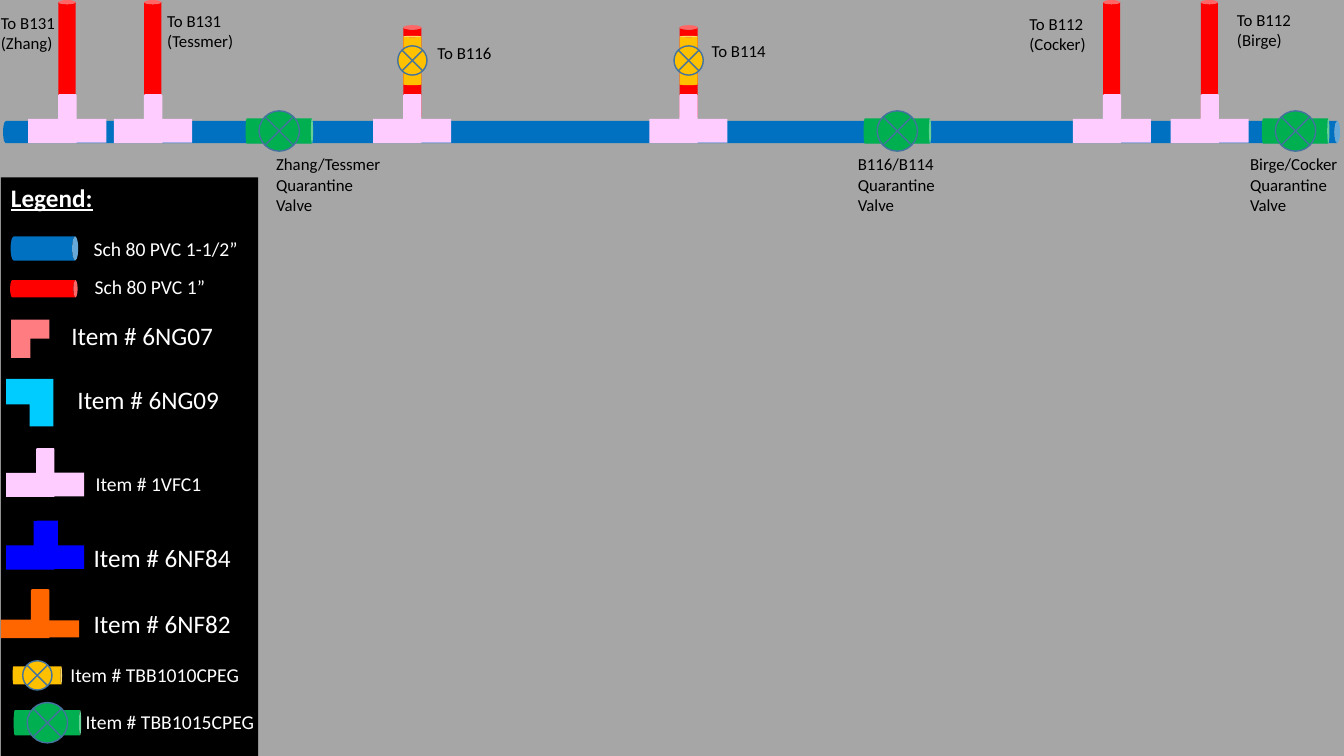
from dataclasses import dataclass
from pptx import Presentation
from pptx import util as u
from pptx.dml.color import RGBColor
from pptx.enum import shapes, text

Kind = shapes.MSO_SHAPE


@dataclass(frozen=True)
class Theme:
    font: str = "Calibri"
    back: str = "A6A6A6"
    panel: str = "000000"
    dark: str = "000000"
    light: str = "FFFFFF"
    main: str = "0070C0"
    branch: str = "FF0000"
    tee: str = "FFCCFF"
    salmon: str = "FF7C80"
    cyan: str = "00CCFF"
    blue: str = "0000FF"
    orange: str = "FF6600"
    green: str = "00B050"
    gold: str = "FFC000"
    edge: str = "43739E"
    small: int = 12
    mid: int = 14
    big: int = 18


class Board:
    def __init__(self, slide, theme):
        self.slide = slide
        self.theme = theme
        slide.background.fill.solid()
        slide.background.fill.fore_color.rgb = RGBColor.from_string(theme.back)

    def shape(self, kind, box, fill, turn=0, adjust=(), edge=None):
        item = self.slide.shapes.add_shape(kind, *map(u.Inches, box))
        item.shadow.inherit = False
        item.rotation = turn
        for i, value in enumerate(adjust):
            item.adjustments[i] = value
        item.fill.solid()
        item.fill.fore_color.rgb = RGBColor.from_string(fill)
        if edge:
            item.line.color.rgb = RGBColor.from_string(edge)
            item.line.width = u.Pt(1)
        else:
            item.line.fill.background()
        return item

    def group(self, *items):
        return self.slide.shapes.add_group_shape(items)

    def pipe(self, box, fill, turn=0, adjust=()):
        return self.shape(Kind.CAN, box, fill, turn, adjust)

    def elbow(self, box, fill, turn, adjust=()):
        return self.shape(Kind.CORNER, box, fill, turn, adjust)

    def tee(self, x, y, fill, left=(0.38, 0.5), right=(0.358, 0.5)):
        east = self.elbow((x + 0.3, y, 0.48, 0.47), fill, 270, right)
        east._element.spPr.xfrm.set("flipV", "1")
        west = self.elbow((x, y, 0.48, 0.48), fill, 270, left)
        self.group(east, west)

    def valve(self, x, y, size, fill, turn=90):
        wide, long, knob = size
        body = self.pipe((x - wide / 2, y - long / 2, wide, long),
                         fill, turn, (0.087,))
        dial = self.shape(Kind.FLOWCHART_SUMMING_JUNCTION,
                          (x - knob / 2, y - knob / 2, knob, knob),
                          fill, (turn + 270) % 360, edge=self.theme.edge)
        self.group(body, dial)

    def run(self, frame, words, size, color, head=False):
        para = frame.paragraphs[0]
        para.alignment = text.PP_ALIGN.LEFT
        run = para.add_run()
        run.text = words
        run.font.name = self.theme.font
        run.font.size = u.Pt(size)
        run.font.color.rgb = RGBColor.from_string(color)
        if head:
            run.font.bold = run.font.underline = True

    def label(self, words, box, size, color):
        frame = self.slide.shapes.add_textbox(*map(u.Inches, box)).text_frame
        frame.word_wrap = True
        frame.auto_size = text.MSO_AUTO_SIZE.SHAPE_TO_FIT_TEXT
        self.run(frame, words, size, color)


def legend(board):
    t = board.theme
    panel = board.shape(Kind.RECTANGLE, (0.01, 1.76, 2.55, 5.75), t.panel)
    panel.text_frame.vertical_anchor = text.MSO_ANCHOR.TOP
    board.run(panel.text_frame, "Legend:", t.big, t.light, True)

    board.pipe((0.32, 2.13, 0.24, 0.67), t.main, 90)
    board.pipe((0.35, 2.53, 0.17, 0.67), t.branch, 90)
    board.elbow((0.11, 3.17, 0.38, 0.38), t.salmon, 90)
    board.elbow((0.06, 3.76, 0.47, 0.47), t.cyan, 180, (0.535, 0.5))
    board.tee(0.06, 4.45, t.tee)
    board.tee(0.06, 5.17, t.blue, (0.431, 0.5), (0.445, 0.5))
    board.tee(0.01, 5.85, t.orange, (0.38, 0.382), (0.358, 0.361))
    board.valve(0.37, 6.7, SLIM, t.gold)
    board.valve(0.47, 7.17, WIDE, t.green)

    for words, x, y, wide, size in (
        ("Sch 80 PVC 1-1/2”", 0.83, 2.3, 1.77, t.mid),
        ("Sch 80 PVC 1”", 0.84, 2.68, 1.77, t.mid),
        ("Item # 6NG07", 0.61, 3.13, 1.68, t.big),
        ("Item # 6NG09", 0.67, 3.76, 1.68, t.big),
        ("Item # 1VFC1", 0.85, 4.63, 1.77, t.mid),
        ("Item # 6NF84", 0.83, 5.33, 2.09, t.big),
        ("Item # 6NF82", 0.83, 5.99, 2.09, t.big),
        ("Item # TBB1010CPEG", 0.6, 6.53, 2.58, t.mid),
        ("Item # TBB1015CPEG", 0.75, 6.99, 2.58, t.mid),
    ):
        board.label(words, (x, y, wide, 0.4 if size == t.big else 0.34),
                    size, t.light)


def piping(board):
    t = board.theme
    board.pipe((6.55, -5.32, 0.22, 13.26), t.main, 90)
    for x in (0.28, 1.13, 10.64, 11.61):
        board.pipe((x + 0.3, 0, 0.17, 1.19), t.branch)
        board.tee(x, 0.94, t.tee)
    for x in (3.7, 6.44):
        board.pipe((x + 0.3, 0.25, 0.18, 0.93), t.branch)
        board.tee(x, 0.94, t.tee)
        board.valve(x + 0.39, 0.6, SLIM, t.gold, 0)
    for x in (2.77, 8.9, 12.85):
        board.valve(x, 1.3, WIDE, t.green)

    for words, x, y, wide, high in (
        ("To B131 (Zhang)", -0.09, 0.08, 1.19, 0.5),
        ("To B131 (Tessmer)", 1.56, 0.06, 1.19, 0.5),
        ("To B116", 4.24, 0.37, 1.19, 0.3),
        ("To B114", 6.96, 0.36, 1.19, 0.3),
        ("To B112 (Cocker)", 10.11, 0.09, 1.19, 0.5),
        ("To B112 (Birge)", 12.17, 0.05, 1.19, 0.5),
        ("Zhang/Tessmer Quarantine Valve", 2.64, 1.48, 1.33, 0.71),
        ("B116/B114 Quarantine Valve", 8.41, 1.48, 1.33, 0.71),
        ("Birge/Cocker Quarantine Valve", 12.3, 1.48, 1.33, 0.71),
    ):
        board.label(words, (x, y, wide, high), t.small, t.dark)


SLIM = (0.18, 0.49, 0.29)
WIDE = (0.25, 0.67, 0.4)


def main():
    deck = Presentation()
    deck.slide_width = u.Inches(13.33)
    deck.slide_height = u.Inches(7.5)
    board = Board(deck.slides.add_slide(deck.slide_layouts[6]), Theme())
    legend(board)
    piping(board)
    deck.save("out.pptx")


if __name__ == "__main__":
    main()
